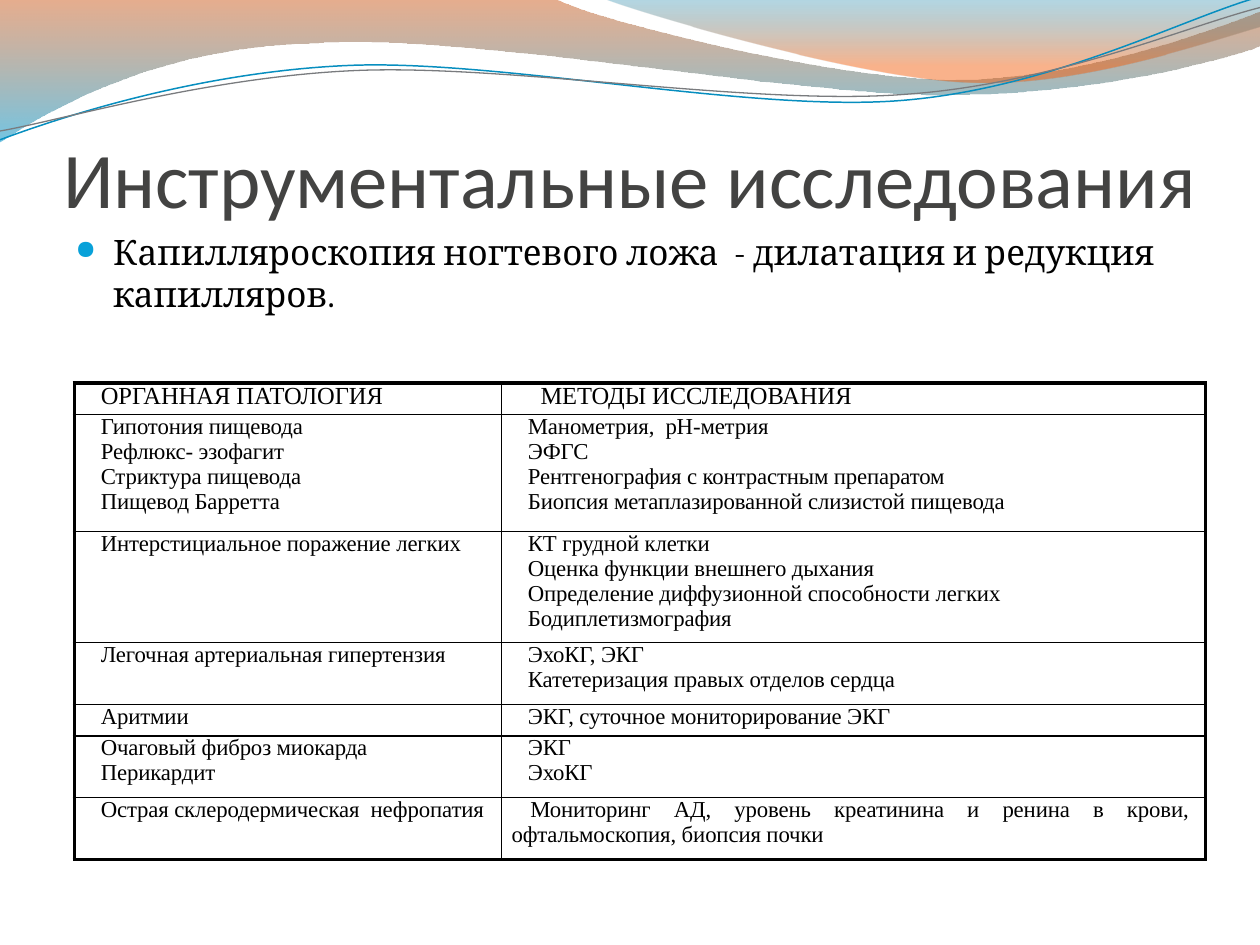
from dataclasses import dataclass
from typing import Any, Optional

from lxml.etree import SubElement
from pptx import Presentation
from pptx.dml.color import RGBColor
from pptx.enum.text import MSO_ANCHOR, MSO_AUTO_SIZE, PP_ALIGN
from pptx.oxml.ns import qn
from pptx.util import Inches, Pt

BLACK = "000000"
THIN, THICK = 1, 2.25


@dataclass
class GradientStop:
    position: float
    color: str
    opacity: int


@dataclass
class Wave:
    """Start point, then segments: (x, y) is straight, six numbers are a Bézier curve."""
    start: tuple
    segments: list
    stops: tuple = ()
    line_color: Optional[str] = None
    line_width: float = 0


@dataclass
class TableRow:
    height: float
    pathology: list
    methods: list
    size: int = 13
    methods_indent: float = 0.15
    methods_margins: tuple = (0, 0)


WAVES = [
    Wave((0, 0), [
        (4.4, -0.01), (4.76, 0.17, 6.64, 0.63, 7.58, 0.63), (8.53, 0.63, 9.58, 0.26, 10, 0.09),
        (10.01, 0.36), (9.83, 0.44, 8.7, 0.76, 7.46, 0.75), (6.22, 0.75, 3.82, 0.28, 2.57, 0.34),
        (1.29, 0.36, 0.46, 0.83, -0.01, 1.13),
    ], stops=(GradientStop(0, "C94A04", 45), GradientStop(1, "0095CC", 55))),
    Wave((4.79, -0.01), [
        (5.09, 0.11, 6.82, 0.62, 7.69, 0.65), (8.56, 0.69, 9.61, 0.32, 10, 0.21), (10, 0),
    ], stops=(GradientStop(0, "007AA6", 30), GradientStop(0.8, "F45700", 45))),
    Wave((0, 1.11), [
        (0.48, 0.93, 1.58, 0.57, 2.77, 0.52), (3.95, 0.47, 5.93, 0.89, 7.13, 0.8),
        (8.33, 0.71, 9.38, 0.15, 9.98, -0.02),
    ], line_color="078EBF", line_width=0.85),
    Wave((0, 1.04), [
        (0.47, 0.96, 1.64, 0.61, 2.83, 0.56), (4.03, 0.51, 5.97, 0.84, 7.17, 0.75),
        (8.36, 0.67, 9.41, 0.21, 10, 0.06),
    ], line_color="797B7E", line_width=0.75),
]

ROWS = [
    TableRow(0.25, ["ОРГАННАЯ ПАТОЛОГИЯ"], ["МЕТОДЫ ИССЛЕДОВАНИЯ"], size=14, methods_indent=0.25),
    TableRow(0.93,
             ["Гипотония пищевода", "Рефлюкс- эзофагит", "Стриктура пищевода", "Пищевод Барретта"],
             ["Манометрия,  pH-метрия", "ЭФГС", "Рентгенография с контрастным препаратом",
              "Биопсия метаплазированной слизистой пищевода"]),
    TableRow(0.88, ["Интерстициальное поражение легких"],
             ["КТ грудной клетки", "Оценка функции внешнего дыхания",
              "Определение диффузионной способности легких", "Бодиплетизмография"]),
    TableRow(0.49, ["Легочная артериальная гипертензия"],
             ["ЭхоКГ, ЭКГ", "Катетеризация правых отделов сердца"]),
    TableRow(0.25, ["Аритмии"], ["ЭКГ, суточное мониторирование ЭКГ"]),
    TableRow(0.49, ["Очаговый фиброз миокарда", "Перикардит"], ["ЭКГ", "ЭхоКГ"]),
    TableRow(0.49, ["Острая склеродермическая  нефропатия"],
             ["Мониторинг АД, уровень креатинина и ренина в крови, "
              "офтальмоскопия, биопсия почки"], methods_margins=(0.02, 0.08)),
]
COLUMN_WIDTHS = (3.39, 5.59)


def rgb(color: str) -> RGBColor:
    return RGBColor.from_string(color)


def apply_format(target: Any, values: dict) -> None:
    for attribute, value in values.items():
        setattr(target, attribute, value)


def format_font(font: Any, name: str, size: float, color: str) -> None:
    apply_format(font, {"name": name, "size": Pt(size)})
    font.color.rgb = rgb(color)


def set_indent(paragraph: Any, left: float, first_line: float, right: float = 0) -> None:
    properties = paragraph._p.get_or_add_pPr()
    for name, value in {"marL": left, "marR": right, "indent": first_line}.items():
        properties.set(name, str(Inches(value)))


def bend_segments(shape: Any, segments: list) -> None:
    """Turn the straight segments that have control points into Bézier curves."""
    lines = list(shape._element.spPr.iter(qn("a:lnTo")))
    for line, segment in zip(lines, segments):
        if len(segment) == 2:
            continue
        line.tag = qn("a:cubicBezTo")
        line.remove(line[0])
        for x, y in zip(segment[::2], segment[1::2]):
            SubElement(line, qn("a:pt"), x=str(Inches(x) - shape.left),
                       y=str(Inches(y) - shape.top))


def draw_wave(slide: Any, wave: Wave) -> None:
    builder = slide.shapes.build_freeform(Inches(wave.start[0]), Inches(wave.start[1]))
    builder.add_line_segments([(Inches(segment[-2]), Inches(segment[-1]))
                               for segment in wave.segments], close=bool(wave.stops))
    shape = builder.convert_to_shape()
    bend_segments(shape, wave.segments)
    shape.shadow.inherit = False
    if not wave.stops:
        shape.fill.background()
        shape.line.color.rgb = rgb(wave.line_color)
        shape.line.width = Pt(wave.line_width)
        return
    shape.line.fill.background()
    shape.fill.gradient()
    shape.fill.gradient_angle = 270
    for gradient_stop, stop in zip(shape.fill.gradient_stops, wave.stops):
        gradient_stop.position = stop.position
        gradient_stop.color.rgb = rgb(stop.color)
    for color, stop in zip(shape._element.spPr.iter(qn("a:srgbClr")), wave.stops):
        SubElement(color, qn("a:alpha"), val=str(stop.opacity * 1000))


def draw_title(slide: Any, text: str) -> None:
    title = slide.shapes.title
    slide.shapes._spTree.append(title._element)
    apply_format(title, {"left": Inches(0.5), "top": Inches(0.77),
                         "width": Inches(9), "height": Inches(1.01)})
    title.text = text
    apply_format(title.text_frame, {
        "vertical_anchor": MSO_ANCHOR.BOTTOM, "auto_size": MSO_AUTO_SIZE.NONE, "word_wrap": True,
        "margin_left": 0, "margin_right": 0, "margin_top": Inches(0.05), "margin_bottom": 0})
    paragraph = title.text_frame.paragraphs[0]
    paragraph.alignment = PP_ALIGN.LEFT
    format_font(paragraph.runs[0].font, "Calibri", 45, "434342")


def draw_finding(slide: Any, text: str) -> None:
    finding = slide.shapes.add_textbox(Inches(0.5), Inches(1.78), Inches(9), Inches(5.14))
    finding.text_frame.word_wrap = True
    paragraph = finding.text_frame.paragraphs[0]
    paragraph.text = text
    paragraph.space_before = Pt(4)
    set_indent(paragraph, 0.3, -0.3)
    properties = paragraph._p.get_or_add_pPr()
    SubElement(SubElement(properties, qn("a:buClr")), qn("a:srgbClr"), val="08A1D9")
    SubElement(properties, qn("a:buSzPct"), val="75000")
    SubElement(properties, qn("a:buChar"), char="●")
    format_font(paragraph.runs[0].font, "Cambria", 20, BLACK)


def set_borders(cell: Any, widths: dict) -> None:
    properties = cell._tc.get_or_add_tcPr()
    for side, width in widths.items():
        border = SubElement(properties, qn(f"a:ln{side}"), w=str(Pt(width)))
        SubElement(SubElement(border, qn("a:solidFill")), qn("a:srgbClr"), val=BLACK)


def fill_cell(cell: Any, lines: list, size: int, indent: float, margins: tuple) -> None:
    apply_format(cell, {"margin_left": Inches(0.06), "margin_right": Inches(0.06),
                        "margin_top": 0, "margin_bottom": 0})
    cell.fill.background()
    cell.text = "\n".join(lines)
    left, right = margins
    for paragraph in cell.text_frame.paragraphs:
        paragraph.alignment = PP_ALIGN.JUSTIFY
        set_indent(paragraph, left, indent, right)
        format_font(paragraph.runs[0].font, "Times New Roman", size, BLACK)
        paragraph.runs[0]._r.get_or_add_rPr().set("spc", "-5")


def draw_methods_table(slide: Any) -> None:
    table = slide.shapes.add_table(
        len(ROWS), len(COLUMN_WIDTHS), Inches(0.59), Inches(3.04),
        Inches(sum(COLUMN_WIDTHS)), Inches(sum(row.height for row in ROWS))).table
    apply_format(table, {"first_row": False, "horz_banding": False})
    for column, width in zip(table.columns, COLUMN_WIDTHS):
        column.width = Inches(width)
    for r, row in enumerate(ROWS):
        table.rows[r].height = Inches(row.height)
        columns = ((row.pathology, 0.15, (0, 0)),
                   (row.methods, row.methods_indent, row.methods_margins))
        for c, (lines, indent, margins) in enumerate(columns):
            outer_edges = {"L": c == 0, "R": c == len(columns) - 1,
                           "T": r == 0, "B": r == len(ROWS) - 1}
            cell = table.cell(r, c)
            set_borders(cell, {side: THICK if outer else THIN
                               for side, outer in outer_edges.items()})
            fill_cell(cell, lines, row.size, indent, margins)


def main() -> None:
    presentation = Presentation()
    apply_format(presentation, {"slide_width": Inches(10), "slide_height": Inches(7.5)})
    slide = presentation.slides.add_slide(presentation.slide_layouts.get_by_name("Title Only"))
    for wave in WAVES:
        draw_wave(slide, wave)
    draw_title(slide, "Инструментальные исследования")
    draw_finding(slide, "Капилляроскопия ногтевого ложа  - дилатация и редукция капилляров.")
    draw_methods_table(slide)
    presentation.save("out.pptx")


if __name__ == "__main__":
    main()
